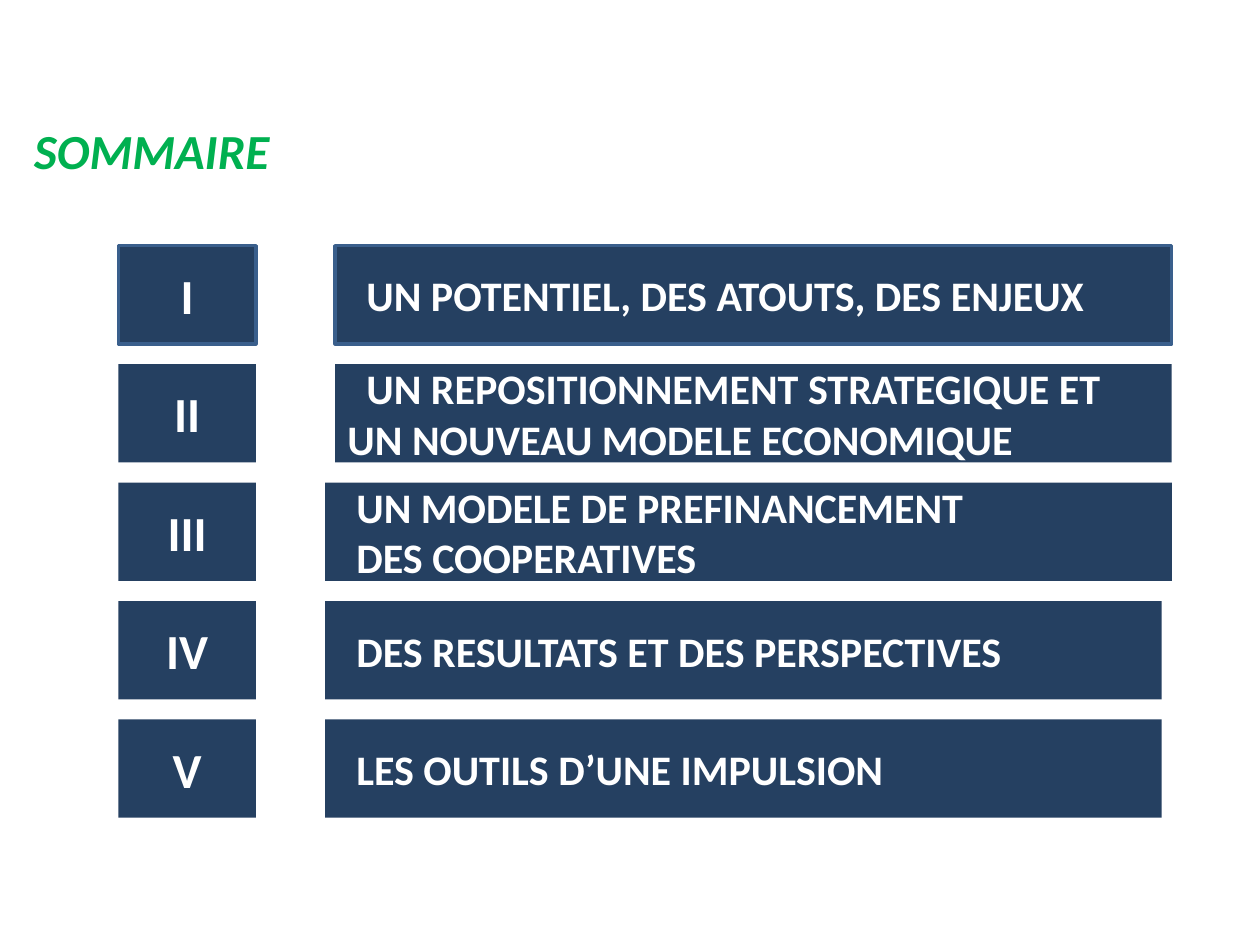
import pptx
import pptx.dml.color
import pptx.enum.shapes
import pptx.enum.text
import pptx.util

Inches = pptx.util.Inches
Align = pptx.enum.text.PP_ALIGN
Anchor = pptx.enum.text.MSO_ANCHOR
NAVY, EDGE, GREEN, WHITE = "254061", "3A5F8C", "00B050", "FFFFFF"
TOP, PITCH, HIGH = 1.95, 0.94, 0.78
ROWS = [
    ("I", "UN POTENTIEL, DES ATOUTS, DES ENJEUX", 2.66, 6.64, EDGE),
    ("II", "UN REPOSITIONNEMENT STRATEGIQUE ET UN NOUVEAU MODELE ECONOMIQUE",
     2.66, 6.64, None),
    ("III", "UN MODELE DE PREFINANCEMENT\nDES COOPERATIVES", 2.58, 6.72, None),
    ("IV", "DES RESULTATS ET DES PERSPECTIVES", 2.58, 6.64, None),
    ("V", "LES OUTILS D’UNE IMPULSION", 2.58, 6.64, None),
]


def color(code):
    return pptx.dml.color.RGBColor.from_string(code)


def write(shape, text, size=28, ink=WHITE, align=Align.LEFT,
          anchor=Anchor.MIDDLE, italic=False, wrap=True, indent=0):
    frame = shape.text_frame
    frame.text = text
    frame.word_wrap = wrap
    frame.vertical_anchor = anchor
    for para in frame.paragraphs:
        para.alignment = align
        if indent:
            props = para._p.get_or_add_pPr()
            props.set("marL", "0")
            props.set("indent", str(Inches(indent)))
        for run in para.runs:
            font = run.font
            font.name, font.size = "Calibri", pptx.util.Pt(size)
            font.bold, font.italic = True, italic
            font.color.rgb = color(ink)


def panel(slide, box, edge=None):
    shape = slide.shapes.add_shape(
        pptx.enum.shapes.MSO_SHAPE.RECTANGLE, *map(Inches, box))
    shape.shadow.inherit = False
    shape.fill.solid()
    shape.fill.fore_color.rgb = color(NAVY)
    if edge:
        shape.line.color.rgb = color(edge)
        shape.line.width = pptx.util.Pt(2)
    else:
        shape.line.fill.background()
    return shape


def header(slide, box):
    title = slide.shapes.title
    title.left, title.top, title.width, title.height = map(Inches, box)
    write(title, "SOMMAIRE", ink=GREEN, anchor=Anchor.TOP,
          italic=True, wrap=False)
    title.text_frame.auto_size = pptx.enum.text.MSO_AUTO_SIZE.SHAPE_TO_FIT_TEXT


def entry(slide, top, mark, text, left, width, edge):
    write(panel(slide, (0.94, top, 1.09, HIGH), edge), mark, align=Align.CENTER)
    write(panel(slide, (left, top, width, HIGH), edge), text,
          size=24, indent=0.15)


def main():
    deck = pptx.Presentation()
    deck.slide_width, deck.slide_height = Inches(10), Inches(7.5)
    slide = deck.slides.add_slide(deck.slide_layouts[5])
    header(slide, (0.17, 0.91, 2.1, 0.57))
    for index, row in enumerate(ROWS):
        entry(slide, TOP + index * PITCH, *row)
    deck.save("out.pptx")


if __name__ == "__main__":
    main()
